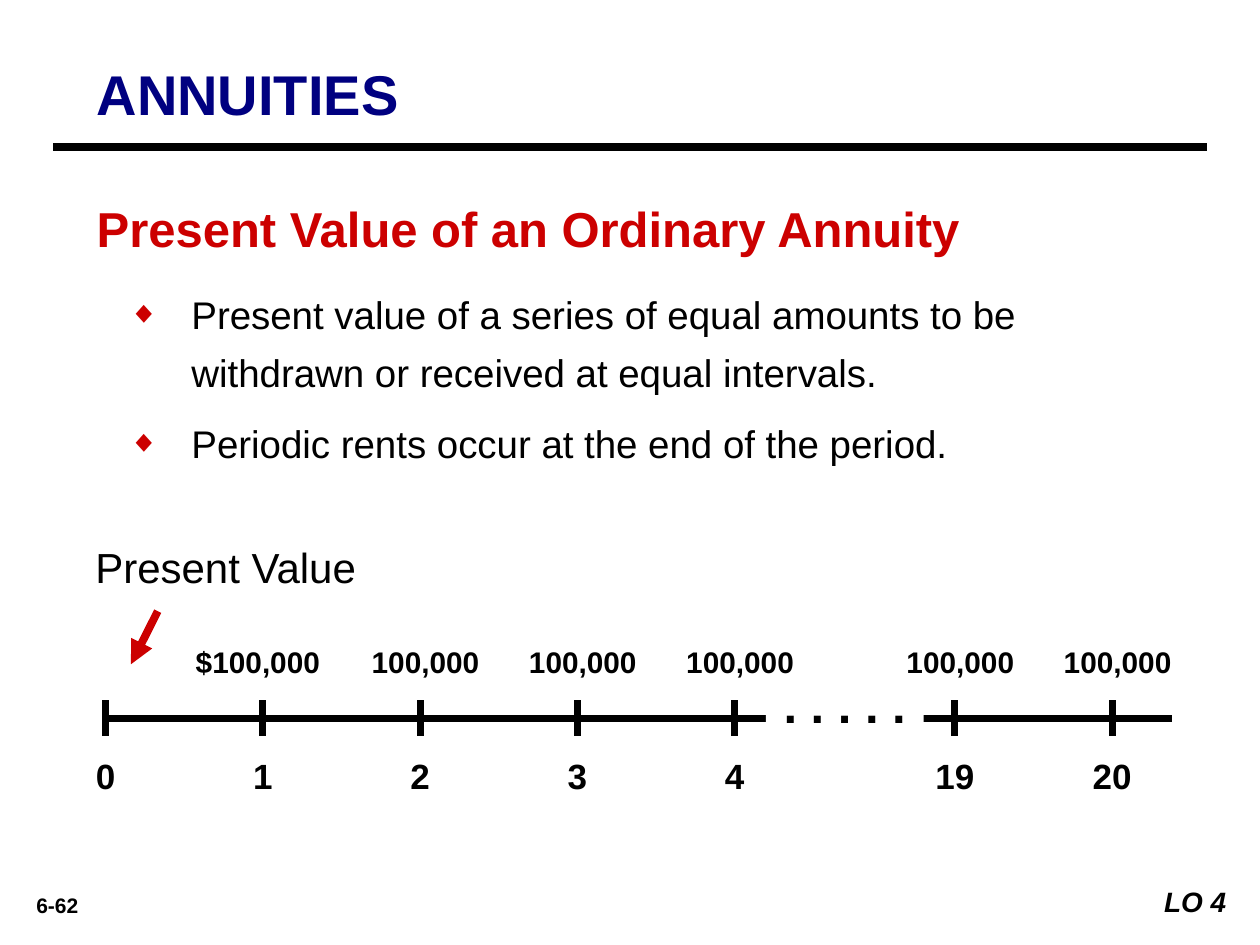
from lxml import etree
from pptx import Presentation
from pptx.dml.color import RGBColor
from pptx.enum.shapes import MSO_CONNECTOR, MSO_SHAPE
from pptx.enum.text import MSO_ANCHOR, PP_ALIGN
from pptx.oxml.ns import qn
from pptx.util import Cm, Pt

LEFT, MID, RIGHT = PP_ALIGN.LEFT, PP_ALIGN.CENTER, PP_ALIGN.RIGHT
TOP, CENTRE = MSO_ANCHOR.TOP, MSO_ANCHOR.MIDDLE
RECT, STRAIGHT = MSO_SHAPE.RECTANGLE, MSO_CONNECTOR.STRAIGHT

BLACK, WHITE = RGBColor(0, 0, 0), RGBColor(255, 255, 255)
RED, NAVY = RGBColor(0xCC, 0, 0), RGBColor(0, 0, 0x80)
THEME = {
    "title": {"size": Pt(32), "bold": True, "color": NAVY},
    "head": {"size": Pt(28), "bold": True, "color": RED},
    "body": {"size": Pt(22), "color": BLACK},
    "note": {"size": Pt(24), "color": BLACK},
    "dots": {"size": Pt(28), "bold": True, "color": BLACK},
    "period": {"size": Pt(20), "bold": True, "color": BLACK},
    "amount": {"size": Pt(17), "bold": True, "color": BLACK},
    "page": {"size": Pt(12), "bold": True, "color": BLACK},
    "goal": {"size": Pt(16), "bold": True, "italic": True, "color": BLACK},
}

deck = Presentation()
deck.slide_width, deck.slide_height = Cm(25.4), Cm(19.05)
slide = deck.slides.add_slide(deck.slide_layouts[6])
shapes = slide.shapes


def write(text, style, x, y, w, h, align=LEFT, space=1.0, panel=False):
    """Put text in a text box, or in a white rectangle if panel is set."""
    place = Cm(x), Cm(y), Cm(w), Cm(h)
    if panel:
        box = shapes.add_shape(RECT, *place)
        box.shadow.inherit = False
        box.fill.solid()
        box.fill.fore_color.rgb = WHITE
        box.line.fill.background()
    else:
        box = shapes.add_textbox(*place)
    frame = box.text_frame
    frame.word_wrap = True
    frame.vertical_anchor = TOP
    frame.text = text
    for para in frame.paragraphs:
        para.alignment = align
        para.line_spacing = space
        font = para.runs[0].font
        font.name = "Arial"
        for key, value in THEME[style].items():
            if key == "color":
                font.color.rgb = value
            else:
                setattr(font, key, value)
    return frame


def rule(x1, y1, x2, y2, width=4, color=BLACK):
    line = shapes.add_connector(STRAIGHT, Cm(x1), Cm(y1), Cm(x2), Cm(y2))
    line.line.width = Pt(width)
    line.line.color.rgb = color
    etree.SubElement(line._element.spPr, qn("a:effectLst"))
    return line


# Title and heading
write("ANNUITIES", "title", 1.7, 1.07, 22.86, 1.55)
rule(1.07, 2.97, 24.33, 2.97, 4.5)
write("Present Value of an Ordinary Annuity", "head",
      1.7, 3.81, 22.66, 1.5, space=1.05)

# Bullets
points = [
    "Present value of a series of equal amounts to be withdrawn or "
    "received at equal intervals.",
    "Periodic rents occur at the end of the period.",
]
body = write("\n".join(points), "body", 1.7, 5.51, 22.23, 4.04, space=1.25)
for para in body.paragraphs:
    para.space_before = Pt(7.5)
    props = para._p.get_or_add_pPr()
    props.set("marL", str(Cm(1.91)))
    props.set("indent", str(Cm(-1.27)))
    tint = etree.SubElement(props, qn("a:buClr"))
    etree.SubElement(tint, qn("a:srgbClr"), val=str(RED))
    etree.SubElement(props, qn("a:buSzPct"), val="80000")
    etree.SubElement(props, qn("a:buFont"), typeface="Arial")
    etree.SubElement(props, qn("a:buChar"), char="◆")

# Time line with its gap
AXIS, STEP, START, LATE = 14.48, 3.17, 2.13, 19.25
rule(2.2, AXIS, 23.63, AXIS)
dots = write(". . . . .", "dots", 15.44, 14.12, 3.18, 0.84, MID, 0.15, True)
dots.vertical_anchor = CENTRE
dots.word_wrap = False

ticks = [(str(i), START + i * STEP) for i in range(5)]
ticks += [("19", LATE), ("20", LATE + STEP)]
for name, x in ticks:
    rule(x, AXIS - 0.36, x, AXIS + 0.36)
    write(name, "period", x - 1.07, 15.09, 2.14, 1.09, MID)
    if name == "1":
        write("$100,000", "amount", x - 1.9, 12.85, 3.6, 0.97, MID)
    elif name != "0":
        write("100,000", "amount", x - 1.48, 12.85, 3.18, 0.97, MID)

# Pointer to the present value
write("Present Value", "note", 0.84, 10.8, 7.42, 1.27, MID)
arrow = rule(3.18, 12.32, 2.64, 13.39, 4.5, RED)
etree.SubElement(arrow.line._get_or_add_ln(), qn("a:tailEnd"), type="triangle")

# Footer
write("6-62", "page", 0.2, 17.86, 1.91, 0.76, MID)
write("LO 4", "goal", 22.86, 17.7, 2.11, 0.94, RIGHT, panel=True)

deck.save("out.pptx")
